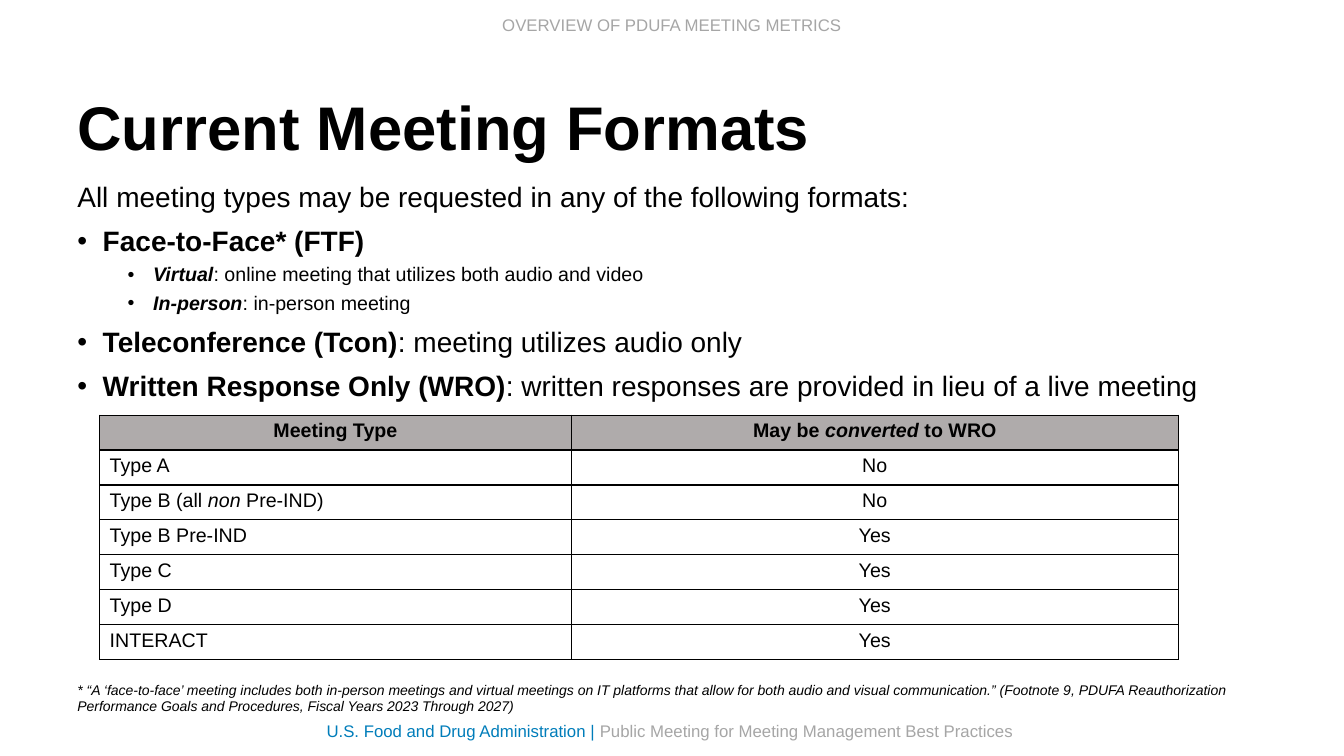
from lxml.etree import SubElement
from pptx import Presentation
from pptx.dml.color import RGBColor
from pptx.enum.text import MSO_ANCHOR as Anchor, PP_ALIGN as Align
from pptx.oxml.ns import qn
from pptx.util import Cm, Pt

BLACK, WHITE, GREY, BLUE, HEADER = "000000", "FFFFFF", "A6A6A6", "007DBA", "AFABAB"
BOLD, ITALIC = {"bold": True}, {"italic": True}
BOLD_ITALIC = BOLD | ITALIC


def colour(value):
    return RGBColor.from_string(value)


class PageBuilder:
    font = "Arial"

    def __init__(self, page):
        self.page = page

    def add_spans(self, para, runs, size, ink=BLACK, **base):
        """Fill a paragraph with runs, each a (text, format) pair."""
        for text, extra in runs:
            span = para.add_run()
            span.text = text
            style = {"name": self.font, "size": Pt(size), "bold": False,
                     "italic": False, "ink": ink} | base | extra
            span.font.color.rgb = colour(style.pop("ink"))
            for key, value in style.items():
                setattr(span.font, key, value)

    def box(self, left, top, width, height, anchor=Anchor.TOP):
        frame = self.page.shapes.add_textbox(
            Cm(left), Cm(top), Cm(width), Cm(height)).text_frame
        frame.word_wrap = True
        frame.vertical_anchor = anchor
        return frame

    def line(self, place, runs, size, align=Align.LEFT, anchor=Anchor.TOP, **base):
        para = self.box(*place, anchor=anchor).paragraphs[0]
        para.alignment = align
        self.add_spans(para, runs, size, **base)
        return para

    def outline(self, place, items):
        """Text with bullet levels: 0 is plain, 1 and 2 are bulleted."""
        frame = self.box(*place)
        levels = [(20, 10, 0), (20, 10, 0.64), (14, 5, 1.91)]
        for index, (level, runs) in enumerate(items):
            size, before, margin = levels[level]
            para = frame.add_paragraph() if index else frame.paragraphs[0]
            formats = {"level": max(level - 1, 0), "line_spacing": 0.9,
                       "space_before": Pt(before)}
            for key, value in formats.items():
                setattr(para, key, value)
            if level:
                props = para._p.get_or_add_pPr()
                props.set("marL", str(Cm(margin)))
                props.set("indent", str(-Cm(0.64)))
                SubElement(props, qn("a:buFont"), typeface=self.font)
                SubElement(props, qn("a:buChar"), char="•")
            self.add_spans(para, runs, size)

    def border(self, cell):
        props = cell._tc.get_or_add_tcPr()
        for side in ("lnL", "lnR", "lnT", "lnB"):
            edge = SubElement(props, qn(f"a:{side}"), w=str(Pt(1)))
            SubElement(SubElement(edge, qn("a:solidFill")), qn("a:srgbClr"), val=BLACK)

    def table(self, left, top, widths, row_height, rows):
        table = self.page.shapes.add_table(
            len(rows), len(widths), Cm(left), Cm(top),
            Cm(sum(widths)), Cm(row_height * len(rows))).table
        table.first_row = table.horz_banding = False
        for column, width in zip(table.columns, widths):
            column.width = Cm(width)
        for r, row in enumerate(rows):
            table.rows[r].height = Cm(row_height)
            for c, runs in enumerate(row):
                cell = table.cell(r, c)
                self.border(cell)
                cell.fill.solid()
                cell.fill.fore_color.rgb = colour(WHITE if r else HEADER)
                para = cell.text_frame.paragraphs[0]
                para.alignment = Align.LEFT if r and not c else Align.CENTER
                self.add_spans(para, runs, 14, bold=r == 0)


def plain(text):
    return [(text, {})]


def main():
    deck = Presentation()
    deck.slide_width, deck.slide_height = Cm(33.87), Cm(19.05)
    builder = PageBuilder(deck.slides.add_slide(deck.slide_layouts[6]))

    # Section name and title
    builder.line((10.46, 0.25, 12.95, 0.76), plain("OVERVIEW OF PDUFA MEETING METRICS"),
                 12, align=Align.CENTER, ink=GREY)
    title = builder.line((1.7, 1.45, 29.21, 3.68), plain("Current Meeting Formats"),
                         44, anchor=Anchor.MIDDLE, bold=True)
    title.line_spacing = 0.9

    # Meeting formats
    builder.outline((1.7, 4.5, 29.21, 5.84), [
        (0, plain("All meeting types may be requested in any of the following formats:")),
        (1, [("Face-to-Face* (FTF)", BOLD)]),
        (2, [("Virtual", BOLD_ITALIC),
             (": online meeting that utilizes both audio and video", {})]),
        (2, [("In-person", BOLD_ITALIC), (": in-person meeting", {})]),
        (1, [("Teleconference (Tcon)", BOLD), (": meeting utilizes audio only", {})]),
        (1, [("Written Response Only (WRO)", BOLD),
             (": written responses are provided in lieu of a live meeting", {})]),
    ])

    # Conversion table
    header = [plain("Meeting Type"),
              [("May be ", {}), ("converted", ITALIC), (" to WRO", {})]]
    answers = [
        (plain("Type A"), "No"),
        ([("Type B (all ", {}), ("non", ITALIC), (" Pre-IND)", {})], "No"),
        (plain("Type B Pre-IND"), "Yes"),
        (plain("Type C"), "Yes"),
        (plain("Type D"), "Yes"),
        (plain("INTERACT"), "Yes"),
    ]
    builder.table(2.51, 10.46, [11.89, 15.29], 0.88,
                  [header] + [[kind, plain(answer)] for kind, answer in answers])

    # Footnote and footer
    builder.line((1.7, 17.04, 29.69, 1.12), plain(
        "* “A ‘face-to-face’ meeting includes both in-person meetings and virtual "
        "meetings on IT platforms that allow for both audio and visual communication.” "
        "(Footnote 9, PDUFA Reauthorization Performance Goals and Procedures, "
        "Fiscal Years 2023 Through 2027)"), 10, italic=True)
    builder.line((7.98, 18.03, 17.93, 0.76), [
        ("U.S. Food and Drug Administration | ", {"ink": BLUE}),
        ("Public Meeting for Meeting Management Best Practices", {"ink": GREY})], 12)

    deck.save("out.pptx")


if __name__ == "__main__":
    main()
